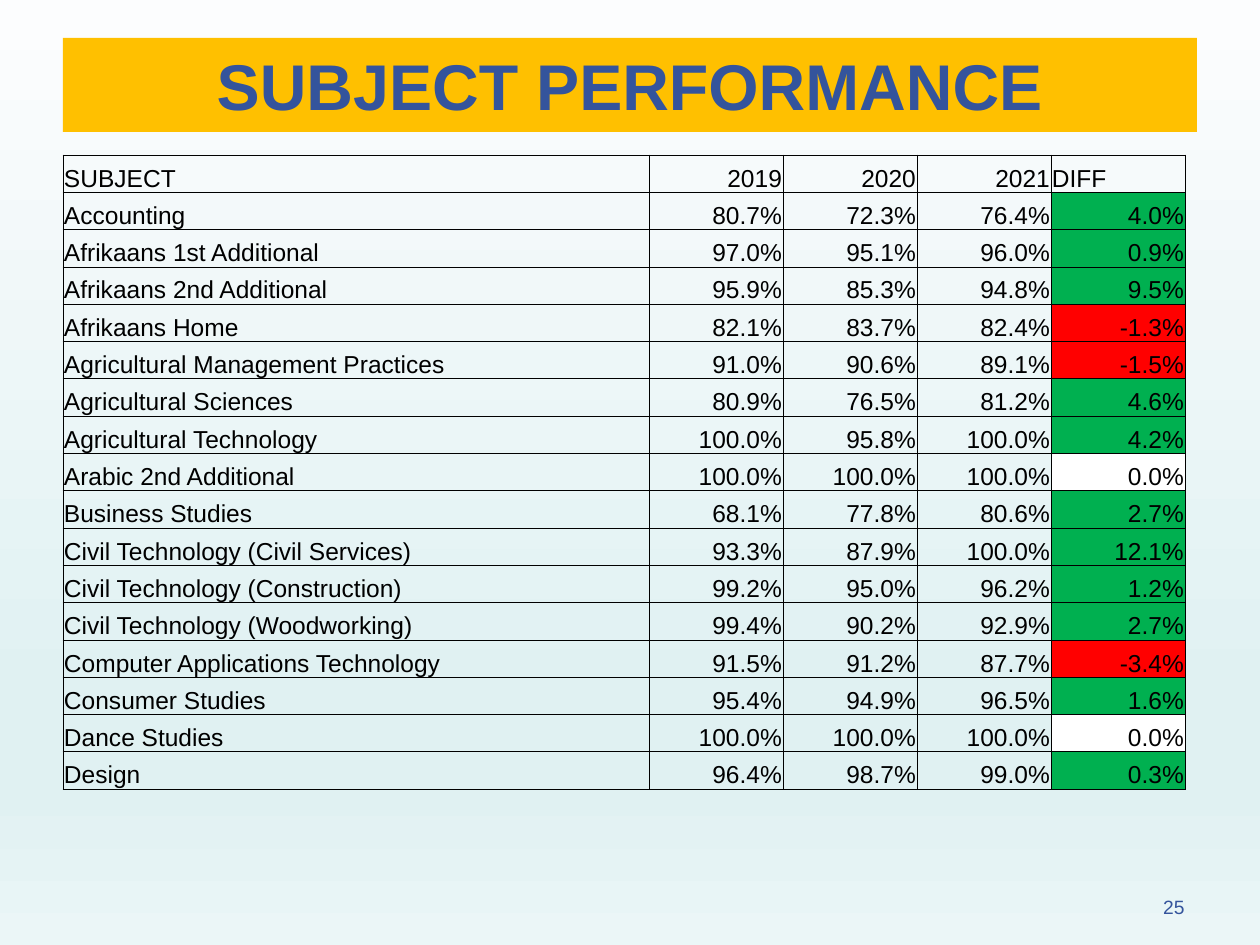
import lxml.etree
import pptx
import pptx.dml.color
import pptx.enum.shapes
import pptx.enum.text
import pptx.oxml.ns
import pptx.util
from dataclasses import dataclass


@dataclass(frozen=True)
class Theme:
    font: str = "Arial"
    blue: str = "34549C"
    gold: str = "FFC000"
    ink: str = "000000"
    rise: str = "00B050"
    fall: str = "FF0000"
    same: str = "FFFFFF"
    backdrop: tuple = ((0, "FCFDFE"), (74, "E0F1F2"), (83, "E0F1F2"), (100, "EBF6F7"))
    title_size: float = 36.9
    table_size: float = 14
    number_size: float = 11
    border: float = 0.5


theme = Theme()
PX = 914400 // 126
RGB = pptx.dml.color.RGBColor.from_string
ALIGN = pptx.enum.text.PP_ALIGN
ANCHOR = pptx.enum.text.MSO_ANCHOR
qn = pptx.oxml.ns.qn

HEADINGS = ("SUBJECT", "2019", "2020", "2021", "DIFF")
RESULTS = [
    ("Accounting", 80.7, 72.3, 76.4, 4.0),
    ("Afrikaans 1st Additional", 97.0, 95.1, 96.0, 0.9),
    ("Afrikaans 2nd Additional", 95.9, 85.3, 94.8, 9.5),
    ("Afrikaans Home", 82.1, 83.7, 82.4, -1.3),
    ("Agricultural Management Practices", 91.0, 90.6, 89.1, -1.5),
    ("Agricultural Sciences", 80.9, 76.5, 81.2, 4.6),
    ("Agricultural Technology", 100.0, 95.8, 100.0, 4.2),
    ("Arabic 2nd Additional", 100.0, 100.0, 100.0, 0.0),
    ("Business Studies", 68.1, 77.8, 80.6, 2.7),
    ("Civil Technology (Civil Services)", 93.3, 87.9, 100.0, 12.1),
    ("Civil Technology (Construction)", 99.2, 95.0, 96.2, 1.2),
    ("Civil Technology (Woodworking)", 99.4, 90.2, 92.9, 2.7),
    ("Computer Applications Technology", 91.5, 91.2, 87.7, -3.4),
    ("Consumer Studies", 95.4, 94.9, 96.5, 1.6),
    ("Dance Studies", 100.0, 100.0, 100.0, 0.0),
    ("Design", 96.4, 98.7, 99.0, 0.3),
]


def write(frame, text, size, color, align, bold=False):
    para = frame.paragraphs[0]
    para.text = text
    para.alignment = align
    para.font.name = theme.font
    para.font.size = pptx.util.Pt(size)
    para.font.bold = bold
    para.font.color.rgb = RGB(color)
    return para


def add_borders(cell):
    properties = cell._tc.get_or_add_tcPr()
    for side in ("lnL", "lnR", "lnT", "lnB"):
        line = lxml.etree.SubElement(properties, qn(f"a:{side}"), w=str(pptx.util.Pt(theme.border)))
        fill = lxml.etree.SubElement(line, qn("a:solidFill"))
        lxml.etree.SubElement(fill, qn("a:srgbClr"), val=theme.ink)


deck = pptx.Presentation()
deck.slide_width, deck.slide_height = 1260 * PX, 945 * PX
page = deck.slides.add_slide(deck.slide_layouts[6])

# Background gradient, top to bottom
backdrop = page.background.fill
backdrop.gradient()
backdrop.gradient_angle = 270
stops = next(page.element.iter(qn("a:gsLst")))
for stop in list(stops):
    stops.remove(stop)
for percent, color in theme.backdrop:
    stop = lxml.etree.SubElement(stops, qn("a:gs"), pos=str(percent * 1000))
    lxml.etree.SubElement(stop, qn("a:srgbClr"), val=color)

# Title banner
banner = page.shapes.add_shape(
    pptx.enum.shapes.MSO_SHAPE.RECTANGLE, 63 * PX, 38 * PX, 1134 * PX, 94 * PX)
banner.shadow.inherit = False
banner.fill.solid()
banner.fill.fore_color.rgb = RGB(theme.gold)
banner.line.fill.background()
banner.text_frame.vertical_anchor = ANCHOR.MIDDLE
write(banner.text_frame, "SUBJECT PERFORMANCE", theme.title_size, theme.blue, ALIGN.CENTER, True)

# Results table
rows = [HEADINGS] + [(name, *(f"{value:.1f}%" for value in values)) for name, *values in RESULTS]
table = page.shapes.add_table(
    len(rows), len(HEADINGS), 63 * PX, 155 * PX, 1122 * PX, 635 * PX).table
table.first_row = table.horz_banding = False
for column, width in zip(table.columns, (586, 134, 134, 134, 134)):
    column.width = width * PX

for r, row in enumerate(rows):
    for c, text in enumerate(row):
        cell = table.cell(r, c)
        cell.margin_left = cell.margin_right = cell.margin_top = PX
        cell.margin_bottom = 0
        cell.vertical_anchor = ANCHOR.BOTTOM
        left = c == 0 or text == "DIFF"
        write(cell.text_frame, text, theme.table_size, theme.ink,
              ALIGN.LEFT if left else ALIGN.RIGHT)
        add_borders(cell)
        if r and c == len(HEADINGS) - 1:
            change = RESULTS[r - 1][-1]
            color = theme.rise if change > 0 else theme.fall if change < 0 else theme.same
            cell.fill.solid()
            cell.fill.fore_color.rgb = RGB(color)
        else:
            cell.fill.background()

# Page number
number_box = page.shapes.add_textbox(903 * PX, 892 * PX, 294 * PX, 34 * PX)
number_box.text_frame.word_wrap = True
para = write(number_box.text_frame, "25", theme.number_size, theme.blue, ALIGN.RIGHT)
para.line_spacing = 0.9
para.space_after = pptx.util.Pt(6)

deck.save("out.pptx")
